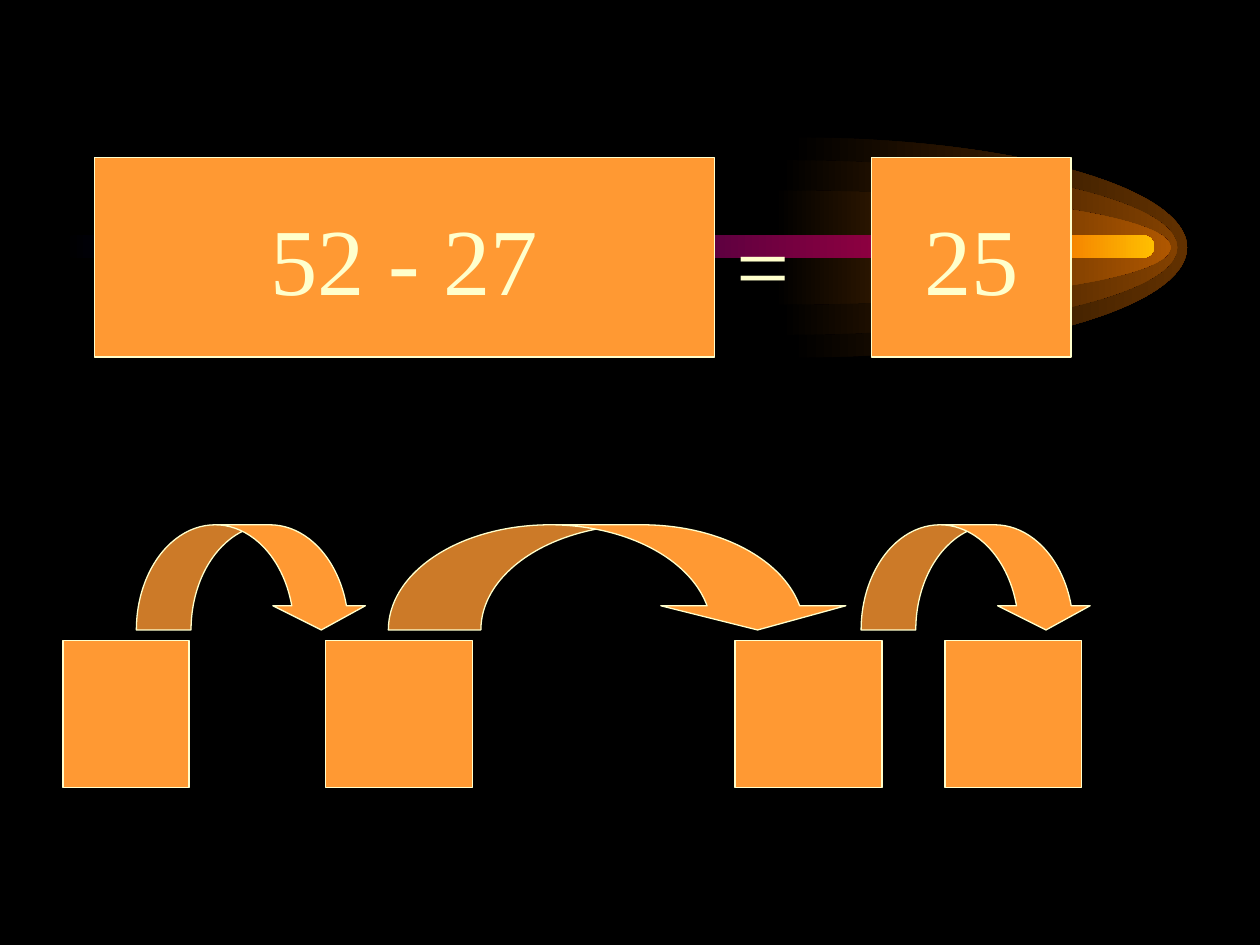
import math

from lxml import etree
from pptx import Presentation
from pptx.dml.color import RGBColor
from pptx.enum import shapes, text
from pptx.oxml import ns
from pptx.util import Cm, Pt

COLOURS = {
    "background": "000000",
    "box": "FF9933",
    "cream": "FFFFCC",
    "glow_outer": "663300",
    "glow_middle": "894400",
    "glow_inner": "B75B00",
}
COMET_STOPS = [(0, "000000"), (20, "000040"), (50, "400040"),
               (75, "8F0040"), (90, "F27300"), (100, "FFBF00")]
FONT = "Times New Roman"


def rgb(name):
    return RGBColor.from_string(COLOURS[name])


def fill_gradient(shape, stops):
    """Horizontal gradient with any number of (percent, hex) stops."""
    shape.fill.gradient()
    shape.fill.gradient_angle = 0
    stop_list = shape._element.spPr.find(".//" + ns.qn("a:gsLst"))
    for old_stop in list(stop_list):
        stop_list.remove(old_stop)
    for percent, colour in stops:
        stop = etree.SubElement(stop_list, ns.qn("a:gs"), pos=str(percent * 1000))
        etree.SubElement(stop, ns.qn("a:srgbClr"), val=colour)
    shape.line.fill.background()
    shape.shadow.inherit = False


def bend_segments(shape):
    """Turn every three straight segments into one cubic curve."""
    segments = list(shape._element.spPr.iter(ns.qn("a:lnTo")))
    for i in range(0, len(segments), 3):
        curve = etree.Element(ns.qn("a:cubicBezTo"))
        segments[i].addprevious(curve)
        for segment in segments[i:i + 3]:
            curve.append(segment[0])
            segment.getparent().remove(segment)


def add_glow(slide, centre_x, radius_y, colour):
    """Right half of an ellipse in three curves, fading in from black."""
    centre_y, radius_x = 4.99, 7.98
    step = math.pi / 3
    handle = 4 / 3 * math.tan(step / 4)

    def place(angle, pull=0):
        x = math.cos(angle) - pull * math.sin(angle)
        y = math.sin(angle) + pull * math.cos(angle)
        return Cm(centre_x + radius_x * x), Cm(centre_y + radius_y * y)

    points = []
    for i in range(3):
        begin = -math.pi / 2 + i * step
        end = begin + step
        points += [place(begin, handle), place(end, -handle), place(end)]
    builder = slide.shapes.build_freeform(*place(-math.pi / 2))
    builder.add_line_segments(points, close=True)
    glow = builder.convert_to_shape()
    bend_segments(glow)
    fill_gradient(glow, [(0, COLOURS["background"]), (100, COLOURS[colour])])


def add_comet(slide):
    comet = slide.shapes.add_shape(shapes.MSO_SHAPE.ROUNDED_RECTANGLE,
                                   Cm(1.27), Cm(4.74), Cm(22), Cm(0.46))
    comet.adjustments[0] = 0.5
    fill_gradient(comet, COMET_STOPS)


def add_orange(slide, kind, left, top, width, height):
    shape = slide.shapes.add_shape(kind, Cm(left), Cm(top), Cm(width), Cm(height))
    shape.fill.solid()
    shape.fill.fore_color.rgb = rgb("box")
    shape.line.color.rgb = rgb("cream")
    shape.line.width = Pt(0.75)
    shape.shadow.inherit = False
    return shape


def write(frame, words, alignment):
    paragraph = frame.paragraphs[0]
    paragraph.alignment = alignment
    run = paragraph.add_run()
    run.text = words
    run.font.size = Pt(54)
    run.font.name = FONT
    run.font.color.rgb = rgb("cream")


def add_box(slide, left, top, width, height, words=None):
    box = add_orange(slide, shapes.MSO_SHAPE.RECTANGLE, left, top, width, height)
    if words:
        box.text_frame.word_wrap = False
        box.text_frame.vertical_anchor = text.MSO_ANCHOR.MIDDLE
        write(box.text_frame, words, text.PP_ALIGN.CENTER)


def add_jump(slide, left, width, adjustments):
    jump = add_orange(slide, shapes.MSO_SHAPE.CURVED_DOWN_ARROW,
                      left, 10.58, width, 2.12)
    for i, value in enumerate(adjustments):
        jump.adjustments[i] = value


def add_equals(slide):
    equals = slide.shapes.add_textbox(Cm(14.6), Cm(4.02), Cm(2.54), Cm(2.54))
    equals.text_frame.word_wrap = True
    equals.text_frame.auto_size = text.MSO_AUTO_SIZE.SHAPE_TO_FIT_TEXT
    write(equals.text_frame, "=", text.PP_ALIGN.LEFT)


def main():
    deck = Presentation()
    deck.slide_width, deck.slide_height = Cm(25.4), Cm(19.05)
    slide = deck.slides.add_slide(deck.slide_layouts[6])
    slide.background.fill.solid()
    slide.background.fill.fore_color.rgb = rgb("background")

    # Comet behind the sum
    for centre_x, radius_y, colour in [(15.95, 2.22, "glow_outer"),
                                       (15.75, 1.76, "glow_middle"),
                                       (15.62, 1.15, "glow_inner")]:
        add_glow(slide, centre_x, radius_y, colour)
    add_comet(slide)

    # Sum
    add_box(slide, 1.9, 3.18, 12.5, 4.02, "52 - 27")

    # Empty number boxes and the jumps between them
    short_jump, long_jump = (0.52, 0.88, 0.23), (0.88, 1.76, 0.23)
    add_box(slide, 1.27, 12.91, 2.54, 2.96)
    add_jump(slide, 7.83, 9.31, long_jump)
    add_jump(slide, 17.36, 4.66, short_jump)
    for left, width in [(6.56, 2.96), (14.82, 2.96), (19.05, 2.75)]:
        add_box(slide, left, 12.91, width, 2.96)
    add_jump(slide, 2.75, 4.66, short_jump)

    # Answer
    add_box(slide, 17.57, 3.18, 4.02, 4.02, "25")
    add_equals(slide)

    deck.save("out.pptx")


if __name__ == "__main__":
    main()
